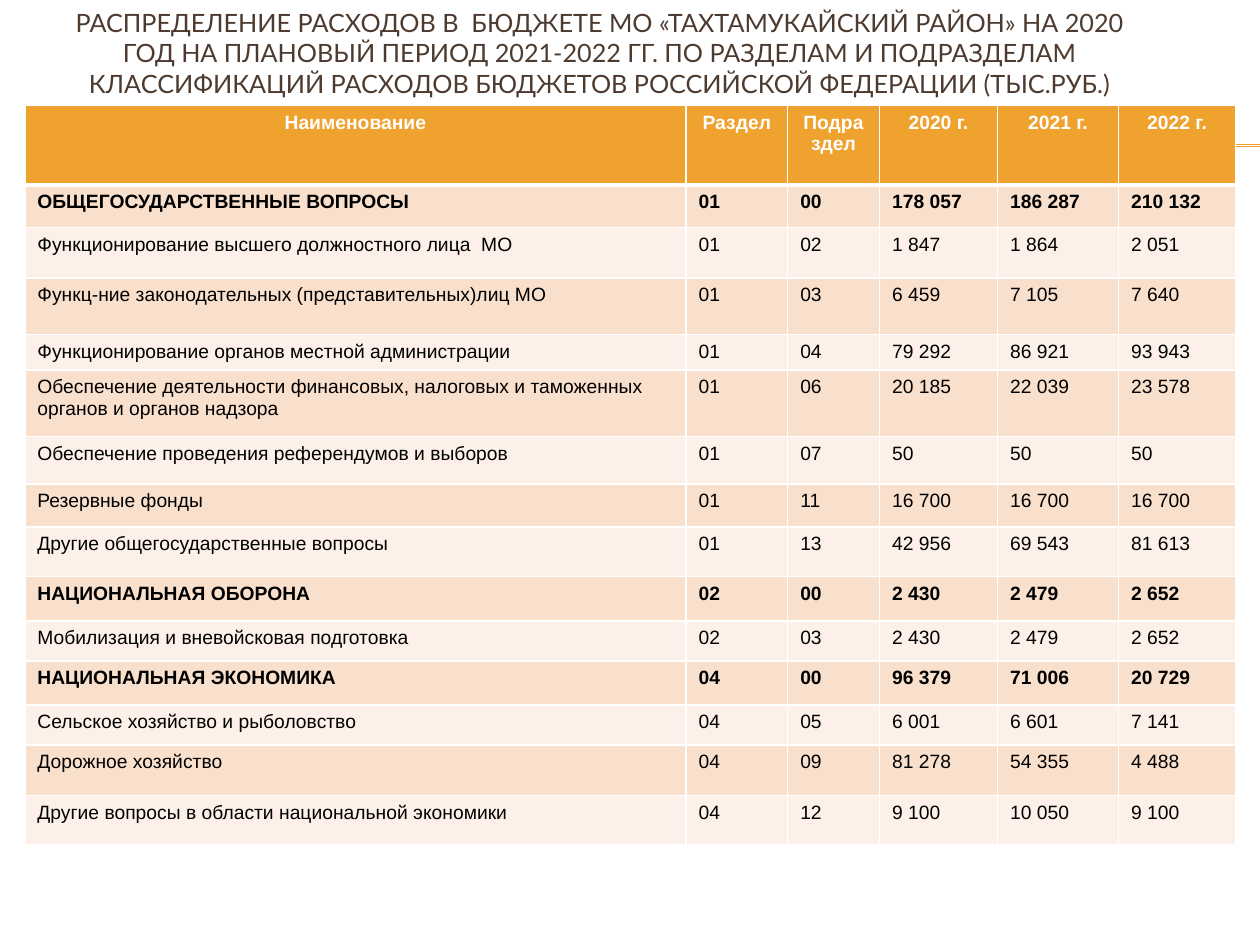
from dataclasses import dataclass

from lxml import etree
from pptx import Presentation
from pptx.dml.color import RGBColor
from pptx.enum.shapes import MSO_CONNECTOR
from pptx.enum.text import MSO_ANCHOR, MSO_AUTO_SIZE, PP_ALIGN
from pptx.oxml.ns import qn
from pptx.util import Cm, Pt

STRAIGHT = MSO_CONNECTOR.STRAIGHT
MIDDLE = MSO_ANCHOR.MIDDLE
NO_FIT = MSO_AUTO_SIZE.NONE
LEFT, CENTER = PP_ALIGN.LEFT, PP_ALIGN.CENTER


@dataclass(frozen=True)
class Theme:
    accent: str = "F0A22E"
    heading: str = "4E3B30"
    ink: str = "000000"
    white: str = "FFFFFF"
    bands: tuple = ("FCF0E8", "F9E0CD")
    heading_font: str = "Lato"
    body_font: str = "Arial"
    heading_size: float = 14.4
    body_size: float = 11
    rule_width: float = 0.75
    border_width: float = 1
    header_border_width: float = 3


THEME = Theme()

TITLE = (
    "РАСПРЕДЕЛЕНИЕ РАСХОДОВ В  БЮДЖЕТЕ МО «ТАХТАМУКАЙСКИЙ РАЙОН» НА 2020 ГОД "
    "НА ПЛАНОВЫЙ ПЕРИОД 2021-2022 ГГ. ПО РАЗДЕЛАМ И ПОДРАЗДЕЛАМ КЛАССИФИКАЦИЙ "
    "РАСХОДОВ БЮДЖЕТОВ РОССИЙСКОЙ ФЕДЕРАЦИИ (ТЫС.РУБ.)"
)
HEADER = ("Наименование", "Раздел", "Подраздел", "2020 г.", "2021 г.", "2022 г.")
COLUMN_WIDTHS = (13.33, 2.05, 1.85, 2.38, 2.44, 2.36)
HEADER_HEIGHT = 1.6
# Row height in cm, then the six cells
EXPENSES = (
    (0.86, "ОБЩЕГОСУДАРСТВЕННЫЕ ВОПРОСЫ", "01", "00", "178 057", "186 287", "210 132"),
    (1.01, "Функционирование высшего должностного лица  МО", "01", "02",
     "1 847", "1 864", "2 051"),
    (1.14, "Функц-ние законодательных (представительных)лиц МО", "01", "03",
     "6 459", "7 105", "7 640"),
    (0.72, "Функционирование органов местной администрации", "01", "04",
     "79 292", "86 921", "93 943"),
    (1.34, "Обеспечение деятельности финансовых, налоговых и таможенных органов "
     "и органов надзора", "01", "06", "20 185", "22 039", "23 578"),
    (0.96, "Обеспечение проведения референдумов и выборов", "01", "07", "50", "50", "50"),
    (0.86, "Резервные фонды", "01", "11", "16 700", "16 700", "16 700"),
    (1.0, "Другие общегосударственные вопросы", "01", "13", "42 956", "69 543", "81 613"),
    (0.9, "НАЦИОНАЛЬНАЯ ОБОРОНА", "02", "00", "2 430", "2 479", "2 652"),
    (0.81, "Мобилизация и вневойсковая подготовка", "02", "03", "2 430", "2 479", "2 652"),
    (0.88, "НАЦИОНАЛЬНАЯ ЭКОНОМИКА", "04", "00", "96 379", "71 006", "20 729"),
    (0.81, "Сельское хозяйство и рыболовство", "04", "05", "6 001", "6 601", "7 141"),
    (1.02, "Дорожное хозяйство", "04", "09", "81 278", "54 355", "4 488"),
    (1.0, "Другие вопросы в области национальной экономики", "04", "12",
     "9 100", "10 050", "9 100"),
)


def write(frame, text, *, font=THEME.body_font, size=THEME.body_size,
          color=THEME.ink, bold=False, align=LEFT):
    frame.word_wrap = True
    paragraph = frame.paragraphs[0]
    paragraph.alignment = align
    run = paragraph.add_run()
    run.text = text
    run.font.name = font
    run.font.size = Pt(size)
    run.font.bold = bold
    run.font.color.rgb = RGBColor.from_string(color)


def add_heading(slide, left, top, width, height):
    heading = slide.shapes.title
    heading.left, heading.top = Cm(left), Cm(top)
    heading.width, heading.height = Cm(width), Cm(height)
    frame = heading.text_frame
    frame.auto_size = NO_FIT
    frame.vertical_anchor = MIDDLE
    frame.margin_left = frame.margin_right = Cm(0.2)
    write(frame, TITLE, font=THEME.heading_font, size=THEME.heading_size,
          color=THEME.heading, align=CENTER)
    frame.paragraphs[0].line_spacing = 1.0


def add_double_rule(slide, left, top, width, gap):
    for y in (top, top + gap):
        rule = slide.shapes.add_connector(
            STRAIGHT, Cm(left), Cm(y), Cm(left + width), Cm(y))
        rule.line.color.rgb = RGBColor.from_string(THEME.accent)
        rule.line.width = Pt(THEME.rule_width)
        etree.SubElement(rule._element.spPr, qn("a:effectLst"))


def set_borders(cell, top, bottom):
    """Draw white cell borders; top and bottom are widths in points."""
    properties = cell._tc.get_or_add_tcPr()
    side = THEME.border_width
    widths = {"lnL": side, "lnR": side, "lnT": top, "lnB": bottom}
    for position, (tag, width) in enumerate(widths.items()):
        border = etree.Element(qn(f"a:{tag}"), w=str(Pt(width)))
        fill = etree.SubElement(border, qn("a:solidFill"))
        etree.SubElement(fill, qn("a:srgbClr"), val=THEME.white)
        properties.insert(position, border)


def add_expense_table(slide, left, top):
    rows = ((HEADER_HEIGHT, *HEADER), *EXPENSES)
    table = slide.shapes.add_table(
        len(rows), len(HEADER), Cm(left), Cm(top), Cm(sum(COLUMN_WIDTHS)),
        Cm(sum(row[0] for row in rows))).table
    for column, width in zip(table.columns, COLUMN_WIDTHS):
        column.width = Cm(width)
    for index, (height, *values) in enumerate(rows):
        table.rows[index].height = Cm(height)
        is_header = index == 0
        is_section = values[2] == "00"
        fill = THEME.accent if is_header else THEME.bands[index % 2]
        thin, thick = THEME.border_width, THEME.header_border_width
        for cell, value in zip(table.rows[index].cells, values):
            cell.fill.solid()
            cell.fill.fore_color.rgb = RGBColor.from_string(fill)
            set_borders(cell, top=thick if index == 1 else thin,
                        bottom=thick if is_header else thin)
            write(cell.text_frame, value, bold=is_header or is_section,
                  color=THEME.white if is_header else THEME.ink,
                  align=CENTER if is_header else LEFT)


def main():
    presentation = Presentation()
    presentation.slide_width, presentation.slide_height = Cm(25.4), Cm(19.05)
    slide = presentation.slides.add_slide(presentation.slide_layouts[5])
    add_double_rule(slide, left=1.42, top=2.92, width=23.98, gap=0.03)
    add_heading(slide, left=1.27, top=0, width=21.64, height=2.13)
    add_expense_table(slide, left=0.5, top=2.13)
    presentation.save("out.pptx")


if __name__ == "__main__":
    main()
